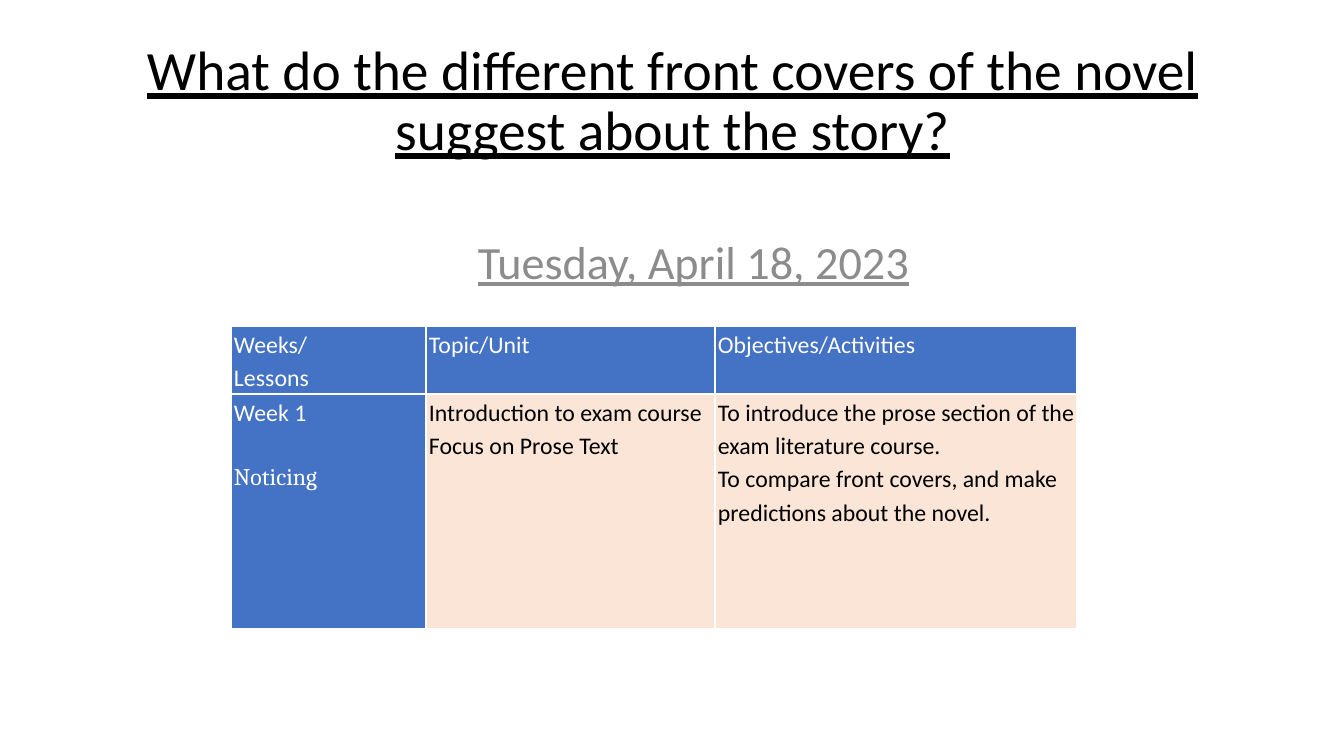
from lxml import etree
from pptx import Presentation
from pptx import util as u
from pptx.dml.color import RGBColor
from pptx.enum import text
from pptx.oxml.ns import qn

COLORS = {
    "black": "000000",
    "white": "FFFFFF",
    "grey": "8C8C8C",
    "blue": "4472C4",
    "peach": "FBE5D6",
}
SCALE = 914400 / 100.8


def px(length):
    return u.Emu(round(length * SCALE))


def add_span(para, words, size, color, font="Calibri", underline=False):
    span = para.add_run()
    span.text = words
    span.font.name = font
    span.font.size = u.Pt(size)
    span.font.bold = False
    span.font.underline = underline
    span.font.color.rgb = RGBColor.from_string(COLORS[color])


deck = Presentation()
deck.slide_width, deck.slide_height = px(1344), px(756)
page = deck.slides.add_slide(deck.slide_layouts[6])

headings = [
    ("What do the different front covers of the novel suggest about the story?",
     (90, 49, 1165, 107), 39.6, "black", 0.9),
    ("Tuesday, April 18, 2023", (381, 241, 625, 40), 33, "grey", 1.0),
]
for words, place, size, color, spacing in headings:
    box = page.shapes.add_textbox(*map(px, place))
    frame = box.text_frame
    frame.word_wrap = True
    frame.vertical_anchor = text.MSO_ANCHOR.MIDDLE
    para = frame.paragraphs[0]
    para.alignment = text.PP_ALIGN.CENTER
    para.line_spacing = spacing
    add_span(para, words, size, color, underline=True)

column_widths = [195, 289, 362]
row_heights = [68, 235]
lessons = [
    [["Weeks/", "Lessons"], ["Topic/Unit"], ["Objectives/Activities"]],
    [["Week 1", "Noticing"],
     ["Introduction to exam course", "Focus on Prose Text"],
     ["To introduce the prose section of the exam literature course.",
      "To compare front covers, and make predictions about the novel."]],
]
table = page.shapes.add_table(
    len(row_heights), len(column_widths), px(231), px(326),
    px(sum(column_widths)), px(sum(row_heights))).table
table.first_row = False
table.horz_banding = False
for column, width in zip(table.columns, column_widths):
    column.width = px(width)

for r, height in enumerate(row_heights):
    table.rows[r].height = px(height)
    for c, lines in enumerate(lessons[r]):
        cell = table.cell(r, c)
        cell.margin_left, cell.margin_right = px(3), px(2)
        cell.margin_top = cell.margin_bottom = 0
        is_label = r == 0 or c == 0

        properties = cell._tc.get_or_add_tcPr()
        for side in ("a:lnL", "a:lnR", "a:lnT", "a:lnB"):
            border = etree.SubElement(properties, qn(side), w=str(u.Pt(1)))
            paint = etree.SubElement(border, qn("a:solidFill"))
            etree.SubElement(paint, qn("a:srgbClr"), val=COLORS["white"])
        cell.fill.solid()
        cell.fill.fore_color.rgb = RGBColor.from_string(
            COLORS["blue" if is_label else "peach"])

        frame = cell.text_frame
        for i, line in enumerate(lines):
            para = frame.add_paragraph() if i else frame.paragraphs[0]
            para.line_spacing = 1.15
            font = "Calibri"
            if line == "Noticing":
                para.space_before = u.Pt(23)
                font = "Cambria"
            add_span(para, line, 17, "white" if is_label else "black", font)

deck.save("out.pptx")
